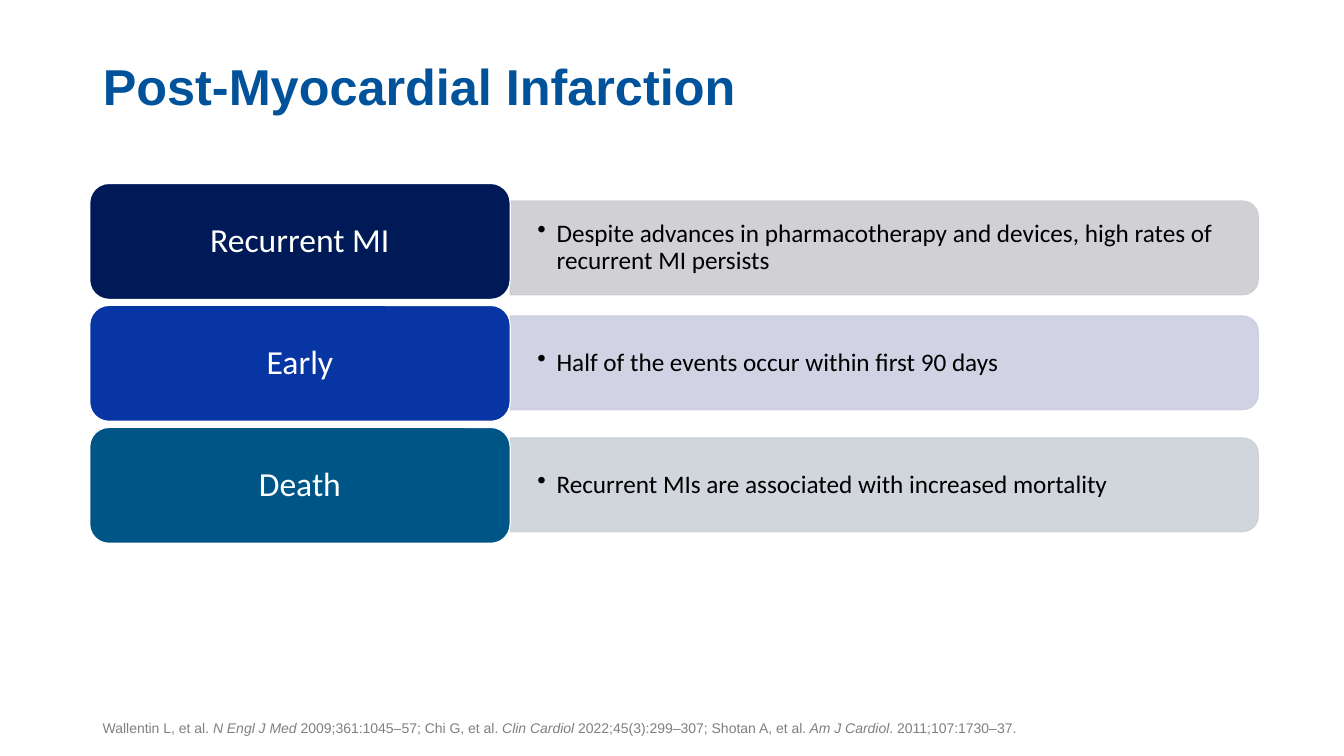
from lxml.etree import SubElement
from pptx import Presentation
from pptx.dml.color import RGBColor
from pptx.enum.shapes import MSO_SHAPE
from pptx.enum.text import MSO_ANCHOR, MSO_AUTO_SIZE, PP_ALIGN
from pptx.oxml.ns import qn
from pptx.util import Inches, Pt

TITLE_BLUE = RGBColor(0x00, 0x53, 0x9B)
NAVY = RGBColor(0x00, 0x1A, 0x57)
ROYAL = RGBColor(0x07, 0x36, 0xA4)
TEAL = RGBColor(0x00, 0x55, 0x87)
PALE_GREY = RGBColor(0xCC, 0xCD, 0xD1)
PALE_VIOLET = RGBColor(0xCC, 0xCE, 0xE0)
PALE_TEAL = RGBColor(0xCC, 0xD1, 0xD9)
WHITE = RGBColor(0xFF, 0xFF, 0xFF)
BLACK = RGBColor(0x00, 0x00, 0x00)
GREY = RGBColor(0x80, 0x80, 0x80)

LABEL_LEFT, LABEL_WIDTH, LABEL_HEIGHT = 0.89, 4.17, 1.15
DETAIL_LEFT, DETAIL_LENGTH, DETAIL_HEIGHT = 5.06, 7.42, 0.93
FIRST_LABEL_TOP, ROW_STEP = 1.82, 1.21

ROWS = [
    ("Recurrent MI", NAVY, PALE_GREY, 2.46,
     "Despite advances in pharmacotherapy and devices, high rates of recurrent MI persists"),
    ("Early", ROYAL, PALE_VIOLET, 3.6, "Half of the events occur within first 90 days"),
    ("Death", TEAL, PALE_TEAL, 4.81, "Recurrent MIs are associated with increased mortality"),
]
CITATIONS = [
    ("Wallentin L, et al. ", False),
    ("N Engl J Med ", True),
    ("2009;361:1045–57; Chi G, et al. ", False),
    ("Clin Cardiol ", True),
    ("2022;45(3):299–307; Shotan A, et al.", False),
    (" Am J Cardiol", True),
    (". 2011;107:1730–37.", False),
]


def write(frame, pieces, *, font, size, color, bold=False, align=PP_ALIGN.LEFT,
          anchor=MSO_ANCHOR.MIDDLE, spacing=None, inset=(0.1, 0.05), bullet=False):
    """Fill a text frame with one paragraph of (text, italic) pieces."""
    frame.word_wrap = True
    frame.auto_size = MSO_AUTO_SIZE.NONE
    frame.vertical_anchor = anchor
    frame.margin_left = frame.margin_right = Inches(inset[0])
    frame.margin_top = frame.margin_bottom = Inches(inset[1])
    paragraph = frame.paragraphs[0]
    paragraph.alignment = align
    if spacing:
        paragraph.line_spacing = spacing
    if bullet:
        add_bullet(paragraph, 0.19)
    for text, italic in pieces:
        run = paragraph.add_run()
        run.text = text
        run.font.name = font
        run.font.size = Pt(size)
        run.font.bold = bold
        run.font.italic = italic
        run.font.color.rgb = color


def add_bullet(paragraph, indent):
    """Give a paragraph a round bullet with a hanging indent."""
    properties = paragraph._p.get_or_add_pPr()
    properties.set("marL", str(Inches(indent)))
    properties.set("indent", str(-Inches(indent)))
    SubElement(properties, qn("a:buChar")).set("char", "•")


def add_block(slide, kind, left, top, width, height, *, fill, line, opacity=None):
    """Add a filled preset shape with a thin outline."""
    block = slide.shapes.add_shape(
        kind, Inches(left), Inches(top), Inches(width), Inches(height))
    block.shadow.inherit = False
    block.fill.solid()
    block.fill.fore_color.rgb = fill
    block.line.color.rgb = line
    block.line.width = Pt(0.85)
    if opacity:
        for color in block._element.spPr.iter(qn("a:srgbClr")):
            SubElement(color, qn("a:alpha")).set("val", str(opacity * 1000))
    return block


def add_text(slide, left, top, width, height, pieces, **text_format):
    """Add a text box."""
    box = slide.shapes.add_textbox(
        Inches(left), Inches(top), Inches(width), Inches(height))
    write(box.text_frame, pieces, **text_format)


def add_title(slide, text):
    """Place and format the title placeholder."""
    title = slide.shapes.title
    title.left, title.top = Inches(0.92), Inches(0.5)
    title.width, title.height = Inches(11.5), Inches(0.71)
    write(title.text_frame, [(text, False)], font="Arial", size=36, color=TITLE_BLUE,
          bold=True, anchor=MSO_ANCHOR.BOTTOM, spacing=0.9)


def add_row(slide, label_top, label, label_color, detail_color, detail_middle, detail):
    """Add a label block and the detail bar to its right."""
    bar = add_block(slide, MSO_SHAPE.ROUND_2_SAME_RECTANGLE,
                    DETAIL_LEFT + (DETAIL_LENGTH - DETAIL_HEIGHT) / 2,
                    detail_middle - DETAIL_LENGTH / 2, DETAIL_HEIGHT, DETAIL_LENGTH,
                    fill=detail_color, line=detail_color, opacity=90)
    bar.rotation = 90
    add_text(slide, DETAIL_LEFT, detail_middle - 0.42, 7.38, 0.84, [(detail, False)],
             font="Calibri", size=18, color=BLACK, spacing=0.9,
             inset=(0.27, 0.14), bullet=True)
    block = add_block(slide, MSO_SHAPE.ROUNDED_RECTANGLE, LABEL_LEFT, label_top,
                      LABEL_WIDTH, LABEL_HEIGHT, fill=label_color, line=WHITE)
    write(block.text_frame, [(label, False)], font="Calibri", size=24, color=WHITE,
          align=PP_ALIGN.CENTER, spacing=0.9)


def main():
    """Build the slide and save it."""
    deck = Presentation()
    deck.slide_width, deck.slide_height = Inches(13.33), Inches(7.5)
    slide = deck.slides.add_slide(deck.slide_layouts[5])
    add_title(slide, "Post-Myocardial Infarction")
    for index, row in enumerate(ROWS):
        add_row(slide, FIRST_LABEL_TOP + index * ROW_STEP, *row)
    add_text(slide, 0.92, 6.95, 11.5, 0.4, CITATIONS, font="Arial", size=10,
             color=GREY, anchor=MSO_ANCHOR.BOTTOM)
    deck.save("out.pptx")


if __name__ == "__main__":
    main()
